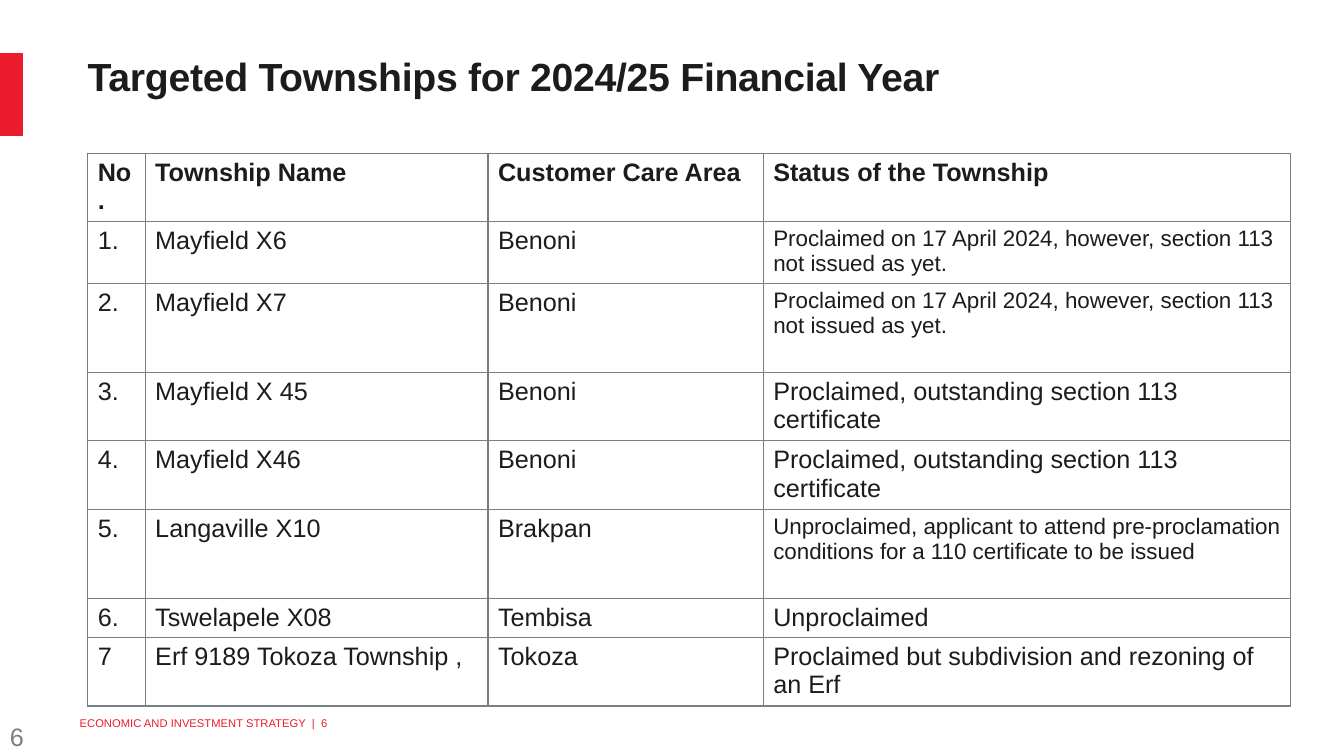
from pptx import Presentation
from pptx.dml.color import RGBColor
from pptx.enum.shapes import MSO_SHAPE
from pptx.enum.text import MSO_ANCHOR, PP_ALIGN
from pptx.oxml import parse_xml
from pptx.oxml.ns import nsdecls
from pptx.util import Inches, Pt

RED, GREY, INK = "ED1B2E", "768083", "1E1C1A"


def rgb(color):
    return RGBColor.from_string(color)


def write(tf, text, size, color, bold=False):
    tf.word_wrap = True
    p = tf.paragraphs[0]
    p.text = text
    p.font.name = "Arial"
    p.font.size = Pt(size)
    p.font.bold = bold
    p.font.color.rgb = rgb(color)
    return p


prs = Presentation()
prs.slide_width, prs.slide_height = Inches(13.33), Inches(7.5)
s = prs.slides.add_slide(prs.slide_layouts[6])

# Footer
tf = s.shapes.add_textbox(Inches(0.79), Inches(7.11), Inches(4.78), Inches(0.23)).text_frame
tf.margin_left = tf.margin_right = tf.margin_top = tf.margin_bottom = 0
write(tf, "ECONOMIC AND INVESTMENT STRATEGY  |  6", 8, RED)

# Red accent at the left edge
accent = s.shapes.add_shape(MSO_SHAPE.RECTANGLE, 0, Inches(0.53), Inches(0.22), Inches(0.81))
accent.shadow.inherit = False
accent.fill.solid()
accent.fill.fore_color.rgb = rgb(RED)
accent.line.color.rgb = rgb(RED)
accent.line.width = Pt(0.75)

# Slide number
tf = s.shapes.add_textbox(0, Inches(7.11), Inches(0.29), Inches(0.28)).text_frame
write(tf, "6", 18, GREY)

# Title
tf = s.shapes.add_textbox(Inches(0.87), Inches(0.06), Inches(10.86), Inches(0.93)).text_frame
tf.margin_left = tf.margin_right = tf.margin_top = tf.margin_bottom = 0
tf.vertical_anchor = MSO_ANCHOR.BOTTOM
p = write(tf, "Targeted Townships for 2024/25 Financial Year", 28, INK, True)
p.line_spacing = 0.9
p.runs[0]._r.get_or_add_rPr().set("spc", "-20")

# Township table: each row has its height, status text size and cell texts
awaiting = "Proclaimed on 17 April 2024, however, section 113 not issued as yet."
outstanding = "Proclaimed, outstanding section 113 certificate"
unproclaimed = ("Unproclaimed, applicant to attend pre-proclamation conditions "
                "for a 110 certificate to be issued")
rezoning = "Proclaimed but subdivision and rezoning of an Erf"
rows = [
    (0.68, 18, "No.", "Township Name", "Customer Care Area", "Status of the Township"),
    (0.61, 16, "1.", "Mayfield X6", "Benoni", awaiting),
    (0.88, 16, "2.", "Mayfield X7", "Benoni", awaiting),
    (0.68, 18, "3.", "Mayfield X 45", "Benoni", outstanding),
    (0.68, 18, "4.", "Mayfield X46", "Benoni", outstanding),
    (0.88, 16, "5.", "Langaville X10", "Brakpan", unproclaimed),
    (0.39, 18, "6.", "Tswelapele X08", "Tembisa", "Unproclaimed"),
    (0.68, 18, "7", "Erf 9189 Tokoza Township ,", "Tokoza", rezoning),
]
widths = [0.57, 3.4, 2.73, 5.23]
table = s.shapes.add_table(len(rows), len(widths), Inches(0.87), Inches(1.52),
                           Inches(sum(widths)), Inches(sum(row[0] for row in rows))).table
table.first_row = table.horz_banding = False
for column, width in zip(table.columns, widths):
    column.width = Inches(width)

for i, (height, status_size, *texts) in enumerate(rows):
    table.rows[i].height = Inches(height)
    for j, text in enumerate(texts):
        cell = table.cell(i, j)
        cell.margin_bottom = Inches(0.03)
        p = write(cell.text_frame, text, status_size if j == 3 else 18, INK, i == 0)
        if text == unproclaimed:
            p.alignment = PP_ALIGN.JUSTIFY
        # Borders go before the fill in the cell properties
        tcPr = cell._tc.get_or_add_tcPr()
        for side in "LRTB":
            tcPr.append(parse_xml(
                f'<a:ln{side} {nsdecls("a")} w="12700"><a:solidFill>'
                f'<a:srgbClr val="{GREY}"/></a:solidFill></a:ln{side}>'))
        cell.fill.background()

prs.save("out.pptx")
